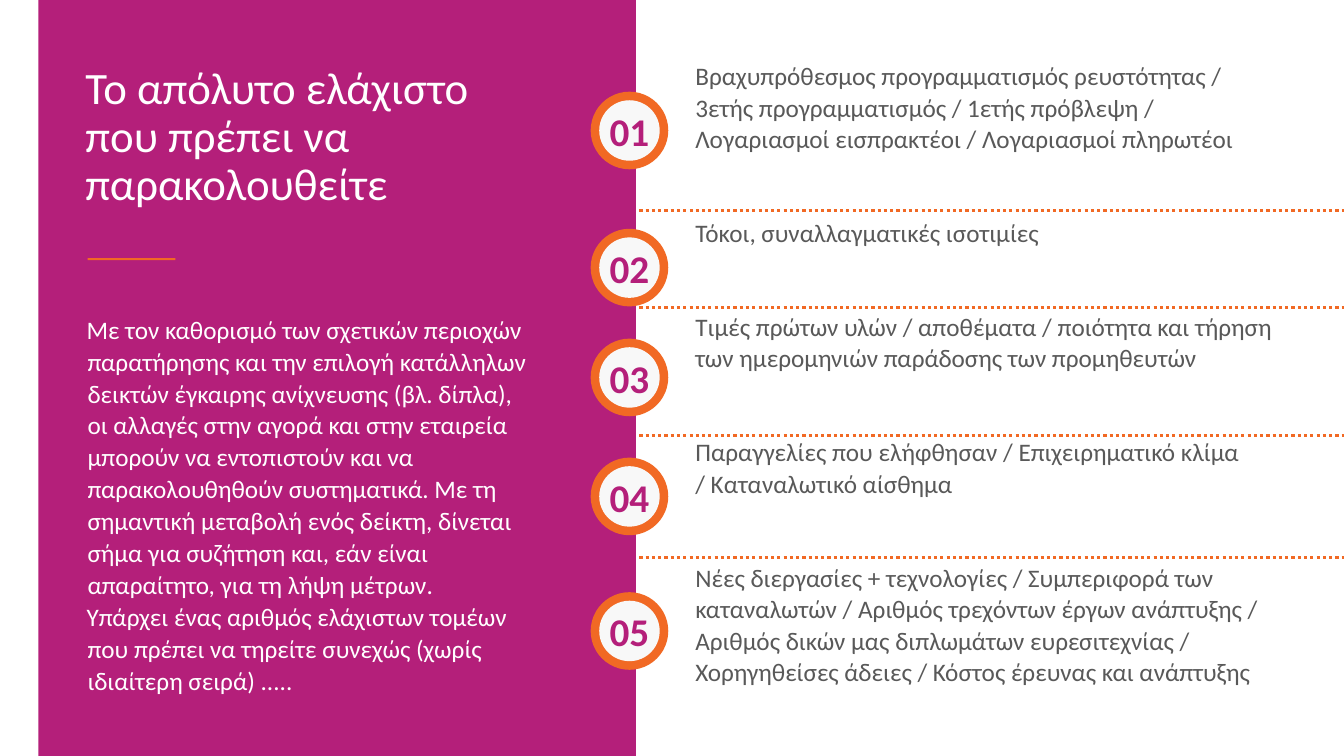
from dataclasses import dataclass

from lxml.etree import SubElement
from pptx import Presentation
from pptx.dml.color import RGBColor
from pptx.enum.dml import MSO_LINE
from pptx.enum.shapes import MSO_CONNECTOR, MSO_SHAPE as Preset
from pptx.enum.text import MSO_ANCHOR as Anchor, PP_ALIGN as Align
from pptx.oxml.ns import qn
from pptx.util import Inches, Pt

CELL = 0.1
COLUMNS, ROWS = 133.33, 75


@dataclass(frozen=True)
class Theme:
    """Colours, font and type sizes of the slide."""
    magenta: str = "B41F7A"
    orange: str = "F16924"
    disc: str = "F8F8F8"
    white: str = "FFFFFF"
    grey: str = "595959"
    font: str = "Calibri"
    title: int = 32
    number: int = 28
    body: int = 18


def cells(count):
    """Turn a count of grid cells into a length."""
    return Inches(count * CELL)


def write(frame, paragraphs, *, size, color, font, bold=False, align=Align.LEFT,
          spacing=None, gap=0, indent=0):
    """Fill a text frame with paragraphs in one format."""
    for index, wording in enumerate(paragraphs):
        paragraph = frame.paragraphs[0] if index == 0 else frame.add_paragraph()
        paragraph.alignment = align
        if spacing:
            paragraph.line_spacing = spacing
        if gap and index:
            paragraph.space_before = Pt(gap)
        if indent:
            properties = paragraph._p.get_or_add_pPr()
            properties.set("marL", str(cells(indent)))
            properties.set("indent", str(-cells(indent)))
        paragraph.text = wording
        for run in paragraph.runs:
            run.font.size, run.font.bold, run.font.name = Pt(size), bold, font
            run.font.color.rgb = RGBColor.from_string(color)


class Board:
    """Draw elements on one slide, measured in grid columns and rows."""

    def __init__(self, slide, theme):
        """Keep the slide and its style."""
        self.slide, self.theme = slide, theme

    def block(self, preset, left, top, width, height, color):
        """Add a filled preset shape without an outline."""
        block = self.slide.shapes.add_shape(preset, *map(cells, (left, top, width, height)))
        block.shadow.inherit = False
        block.fill.solid()
        block.fill.fore_color.rgb = RGBColor.from_string(color)
        block.line.fill.background()
        return block

    def text(self, left, top, width, height, paragraphs, **style):
        """Add a wrapping text box."""
        frame = self.slide.shapes.add_textbox(*map(cells, (left, top, width, height))).text_frame
        frame.word_wrap = True
        write(frame, paragraphs, font=self.theme.font, **style)

    def divider(self, left, row):
        """Add a dotted line that runs to the right edge."""
        divider = self.slide.shapes.add_connector(
            MSO_CONNECTOR.STRAIGHT, *map(cells, (left, row, COLUMNS, row)))
        divider.line.color.rgb = RGBColor.from_string(self.theme.orange)
        divider.line.width = Pt(2.25)
        divider.line.dash_style = MSO_LINE.ROUND_DOT
        SubElement(divider._element.spPr, qn("a:effectLst"))

    def badge(self, column, row, label):
        """Add a numbered disc in a ring, centred on a grid point."""
        for diameter, color in ((7.7, self.theme.orange), (6, self.theme.disc)):
            circle = self.block(Preset.OVAL, column - diameter / 2, row - diameter / 2,
                                diameter, diameter, color)
        frame = circle.text_frame
        frame.margin_left = frame.margin_right = frame.margin_top = frame.margin_bottom = 0
        frame.vertical_anchor = Anchor.MIDDLE
        frame.word_wrap = False
        write(frame, [label], size=self.theme.number, color=self.theme.magenta,
              font=self.theme.font, bold=True, align=Align.CENTER)


TITLE = "Το απόλυτο ελάχιστο που πρέπει να παρακολουθείτε"
EXPLANATION = [
    "Με τον καθορισμό των σχετικών περιοχών παρατήρησης και την επιλογή κατάλληλων "
    "δεικτών έγκαιρης ανίχνευσης (βλ. δίπλα), οι αλλαγές στην αγορά και στην εταιρεία "
    "μπορούν να εντοπιστούν και να παρακολουθηθούν συστηματικά. Με τη σημαντική μεταβολή "
    "ενός δείκτη, δίνεται σήμα για συζήτηση και, εάν είναι απαραίτητο, για τη λήψη μέτρων.",
    "Υπάρχει ένας αριθμός ελάχιστων τομέων που πρέπει να τηρείτε συνεχώς "
    "(χωρίς ιδιαίτερη σειρά) .....",
]
AREAS = [
    "Βραχυπρόθεσμος προγραμματισμός ρευστότητας / 3ετής προγραμματισμός / 1ετής πρόβλεψη / "
    "Λογαριασμοί εισπρακτέοι / Λογαριασμοί πληρωτέοι",
    "Τόκοι, συναλλαγματικές ισοτιμίες",
    "Τιμές πρώτων υλών / αποθέματα / ποιότητα και τήρηση των ημερομηνιών παράδοσης "
    "των προμηθευτών",
    "Παραγγελίες που ελήφθησαν / Επιχειρηματικό κλίμα\v/ Καταναλωτικό αίσθημα",
    "Νέες διεργασίες + τεχνολογίες / Συμπεριφορά των καταναλωτών / Αριθμός τρεχόντων έργων "
    "ανάπτυξης / Αριθμός δικών μας διπλωμάτων ευρεσιτεχνίας / Χορηγηθείσες άδειες / "
    "Κόστος έρευνας και ανάπτυξης",
]
DIVIDER_ROWS = [20.9, 30.5, 43.2, 55.3]
BADGE_ROWS = [12.95, 26.55, 37.45, 49.25, 62.6]
AREA_LINE = 22.4


def main():
    """Build and save the slide."""
    deck = Presentation()
    deck.slide_width, deck.slide_height = cells(COLUMNS), cells(ROWS)
    theme = Theme()
    board = Board(deck.slides.add_slide(deck.slide_layouts[6]), theme)

    for row in DIVIDER_ROWS:
        board.divider(59.7, row)
    board.text(68, 5.4, 59.3, 65, AREAS, size=theme.body, color=theme.grey,
               spacing=Pt(AREA_LINE), gap=2 * AREA_LINE)

    board.block(Preset.RECTANGLE, 3.8, 0, 59.3, ROWS, theme.magenta)
    board.text(7.5, 6, 40, 17, [TITLE], size=theme.title, color=theme.white, spacing=0.9)
    board.block(Preset.RECTANGLE, 8.7, 25.6, 8.7, 0.2, theme.orange)
    board.text(7.6, 30.5, 46.1, 40, EXPLANATION, size=theme.body, color=theme.white,
               spacing=Pt(22.8), indent=0.1)

    for number, row in enumerate(BADGE_ROWS, 1):
        board.badge(62.45, row, f"{number:02}")

    deck.save("out.pptx")


if __name__ == "__main__":
    main()
